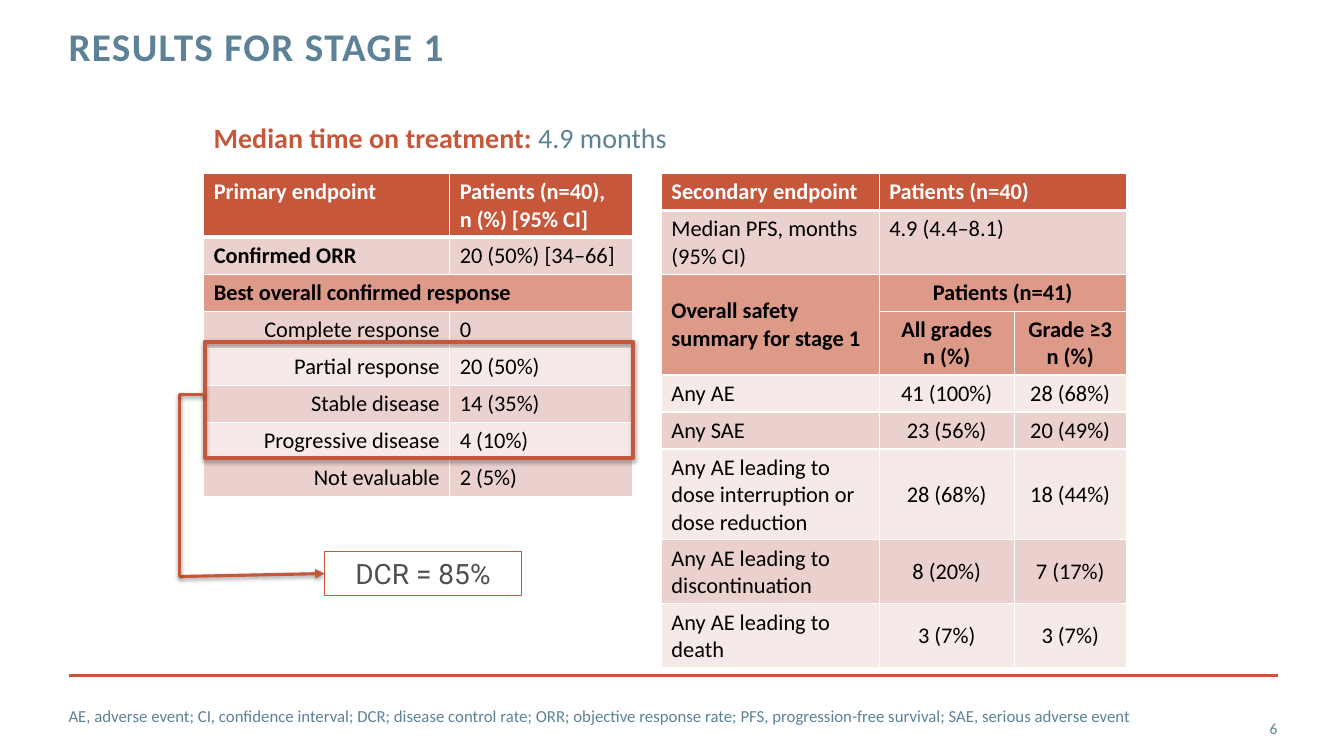
from dataclasses import dataclass

from lxml import etree
from pptx import Presentation
from pptx.dml.color import RGBColor
from pptx.enum import shapes, text
from pptx.oxml import ns
from pptx.util import Inches, Pt


@dataclass(frozen=True)
class Theme:
    accent: str = "C6573B"
    slate: str = "5D8298"
    grey: str = "505050"
    white: str = "FFFFFF"
    black: str = "000000"
    section: str = "DD9A89"
    dark: str = "EAD1CE"
    light: str = "F5EAE8"
    font: str = "Calibri"
    callout_font: str = "Roboto"
    title: int = 28
    lead: int = 20
    cell: int = 16
    note: int = 12
    number: int = 11


T = Theme()
LEFT, CENTER, RIGHT = text.PP_ALIGN.LEFT, text.PP_ALIGN.CENTER, text.PP_ALIGN.RIGHT
TOP, MIDDLE = text.MSO_ANCHOR.TOP, text.MSO_ANCHOR.MIDDLE
LINE_HEIGHT, CELL_PADDING = 0.265, 0.1
ABOVE = "^"  # marks a cell merged into the one above; None merges to the left

PRIMARY = [
    ("header", "Primary endpoint", "Patients (n=40),\nn (%) [95% CI]"),
    ("dark", "Confirmed ORR", "20 (50%) [34–66]"),
    ("section", "Best overall confirmed response", None),
    ("dark", "Complete response", "0"),
    ("light", "Partial response", "20 (50%)"),
    ("dark", "Stable disease", "14 (35%)"),
    ("light", "Progressive disease", "4 (10%)"),
    ("dark", "Not evaluable", "2 (5%)"),
]
SECONDARY = [
    ("header", "Secondary endpoint", "Patients (n=40)", None),
    ("dark", "Median PFS, months (95% CI)", "4.9 (4.4–8.1)", None),
    ("section", "Overall safety summary for stage 1", "Patients (n=41)", None),
    ("section", ABOVE, "All grades\nn (%)", "Grade ≥3\nn (%)"),
    ("light", "Any AE", "41 (100%)", "28 (68%)"),
    ("dark", "Any SAE", "23 (56%)", "20 (49%)"),
    ("light", "Any AE leading to dose interruption or dose reduction",
     "28 (68%)", "18 (44%)"),
    ("dark", "Any AE leading to discontinuation", "8 (20%)", "7 (17%)"),
    ("light", "Any AE leading to death", "3 (7%)", "3 (7%)"),
]


def rgb(code):
    return RGBColor.from_string(code)


def add_run(p, words, size=T.cell, color=T.black, bold=False, font=T.font):
    r = p.add_run()
    r.text = words
    r.font.size, r.font.bold, r.font.name = Pt(size), bold, font
    r.font.color.rgb = rgb(color)
    return r


def write(tf, words, align=LEFT, **style):
    """Fill a text frame, one paragraph per line of words."""
    for i, line in enumerate(words.split("\n")):
        p = tf.paragraphs[0] if i == 0 else tf.add_paragraph()
        p.alignment = align
        add_run(p, line, **style)


def add_text(s, box, words="", anchor=TOP, inset=True, **style):
    sp = s.shapes.add_textbox(*map(Inches, box))
    tf = sp.text_frame
    tf.word_wrap, tf.vertical_anchor = True, anchor
    if not inset:
        tf.margin_left = tf.margin_right = tf.margin_top = tf.margin_bottom = 0
    if words:
        write(tf, words, **style)
    return sp


def set_effects(sp, alpha=None, distance=1.6):
    """Replace inherited effects with a soft drop shadow, or with none."""
    effects = etree.SubElement(sp._element.spPr, ns.qn("a:effectLst"))
    if alpha:
        shadow = etree.SubElement(effects, ns.qn("a:outerShdw"), blurRad=str(Pt(3.1)),
                                  dist=str(Pt(distance)), dir="5400000", rotWithShape="0")
        color = etree.SubElement(shadow, ns.qn("a:srgbClr"), val=T.black)
        etree.SubElement(color, ns.qn("a:alpha"), val=str(alpha * 1000))


def add_line(s, start, end, width, alpha=None, arrow=False):
    c = s.shapes.add_connector(shapes.MSO_CONNECTOR.STRAIGHT, *map(Inches, start + end))
    c.line.color.rgb, c.line.width = rgb(T.accent), Pt(width)
    if arrow:
        etree.SubElement(c.line._get_or_add_ln(), ns.qn("a:tailEnd"), type="triangle")
    set_effects(c, alpha)


def set_borders(cell, **widths):
    tcPr = cell._tc.get_or_add_tcPr()
    for i, side in enumerate("LRTB"):
        ln = etree.Element(ns.qn(f"a:ln{side}"), w=str(Pt(widths.get(side, 1))))
        fill = etree.SubElement(ln, ns.qn("a:solidFill"))
        etree.SubElement(fill, ns.qn("a:srgbClr"), val=T.white)
        tcPr.insert(i, ln)


def add_grid(s, left, top, widths, rows, line_counts, layout):
    """Draw a table; layout(row, column) gives each cell's alignment and anchor."""
    heights = [n * LINE_HEIGHT + CELL_PADDING for n in line_counts]
    frame = s.shapes.add_table(len(rows), len(widths), Inches(left), Inches(top),
                               Inches(sum(widths)), Inches(sum(heights)))
    table = frame.table
    for column, width in zip(table.columns, widths):
        column.width = Inches(width)
    for i, (kind, *words) in enumerate(rows):
        table.rows[i].height = Inches(heights[i])
        for j, value in enumerate(words):
            cell = table.cell(i, j)
            cell.fill.solid()
            cell.fill.fore_color.rgb = rgb(T.accent if kind == "header" else getattr(T, kind))
            set_borders(cell, T=3 if i == 1 else 1, B=3 if i == 0 else 1)
            if value is None:
                table.cell(i, j - 1).merge(cell)
            elif value == ABOVE:
                table.cell(i - 1, j).merge(cell)
            else:
                align, cell.vertical_anchor = layout(i, j)
                write(cell.text_frame, value, align=align,
                      color=T.white if kind == "header" else T.black,
                      bold=kind in ("header", "section") or value == "Confirmed ORR")


def primary_layout(row, column):
    return (RIGHT if row > 2 and column == 0 else LEFT), TOP


def secondary_layout(row, column):
    align = CENTER if row > 1 and column > 0 else LEFT
    return align, MIDDLE if row > 3 or (row == 2 and column == 0) else TOP


def add_heading(s, left, top, width, height):
    sp = s.shapes.title
    sp.left, sp.top, sp.width, sp.height = map(Inches, (left, top, width, height))
    tf = sp.text_frame
    tf.margin_left = tf.margin_right = tf.margin_top = tf.margin_bottom = 0
    tf.vertical_anchor, tf.auto_size = TOP, text.MSO_AUTO_SIZE.NONE
    p = tf.paragraphs[0]
    p.alignment, p.line_spacing = LEFT, Pt(30)
    r = add_run(p, "RESULTS FOR STAGE 1", size=T.title, color=T.slate, bold=True)
    r.font._element.set("spc", "100")


def add_lead(s, left, top, width, height):
    p = add_text(s, (left, top, width, height)).text_frame.paragraphs[0]
    add_run(p, "Median time on treatment: ", size=T.lead, color=T.accent, bold=True)
    add_run(p, "4.9 months", size=T.lead, color=T.slate)


def add_control_rate(s, left, top, width, height):
    """Frame the controlled-disease rows and lead from them to their rate."""
    callout_left, callout_top = left + 1.19, top + 2.08
    sp = add_text(s, (callout_left, callout_top, 1.95, 0.44), "DCR = 85%", align=CENTER,
                  size=T.lead, color=T.grey, font=T.callout_font)
    sp.line.color.rgb, sp.line.width = rgb(T.accent), Pt(0.75)

    frame = s.shapes.add_shape(shapes.MSO_SHAPE.RECTANGLE,
                               *map(Inches, (left, top, width, height)))
    frame.fill.background()
    frame.line.color.rgb, frame.line.width = rgb(T.accent), Pt(3)
    set_effects(frame, 35, distance=1.8)

    upper, lower = (left - 0.25, top + 0.52), (left - 0.25, top + 2.33)
    add_line(s, lower, (callout_left, callout_top + 0.22), 2.25, alpha=38, arrow=True)
    add_line(s, lower, upper, 2.25, alpha=38)
    add_line(s, upper, (left, upper[1]), 2.25, alpha=38)


def add_footer(s, left, top, width):
    add_line(s, (left, top), (left + width, top), 2)
    add_text(s, (left + width - 0.87, top + 0.33, 0.86, 0.4), "6", anchor=MIDDLE, inset=False,
             align=RIGHT, size=T.number, color=T.slate)
    add_text(s, (left, top + 0.2, 11.42, 0.4),
             "AE, adverse event; CI, confidence interval; DCR; disease control rate; "
             "ORR; objective response rate; PFS, progression-free survival; "
             "SAE, serious adverse event",
             anchor=MIDDLE, inset=False, size=T.note, color=T.slate)


def main():
    prs = Presentation()
    prs.slide_width, prs.slide_height = Inches(13.33), Inches(7.5)
    s = prs.slides.add_slide(prs.slide_layouts[5])
    add_heading(s, 0.68, 0.27, 9.56, 0.88)
    add_footer(s, 0.68, 6.7, 12)
    add_lead(s, 2.02, 1.15, 5.59, 0.44)
    add_grid(s, 2.02, 1.72, (2.44, 1.81), PRIMARY, [2] + [1] * 7, primary_layout)
    add_grid(s, 6.56, 1.72, (2.16, 1.34, 1.11), SECONDARY,
             (1, 2, 1, 2, 1, 1, 3, 2, 2), secondary_layout)
    add_control_rate(s, 2.03, 3.39, 4.25, 1.15)
    prs.save("out.pptx")


if __name__ == "__main__":
    main()
